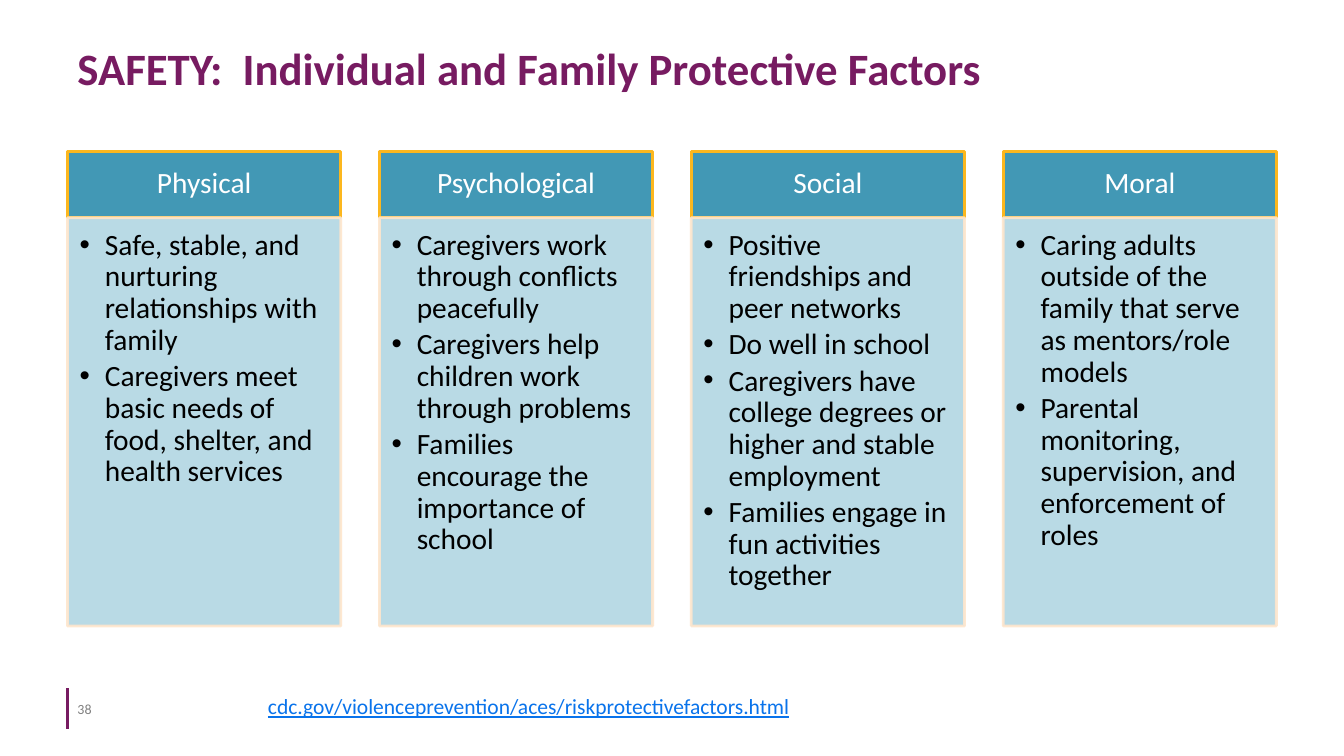
from lxml import etree
from pptx import Presentation
from pptx import util as u
from pptx.dml.color import RGBColor
from pptx.enum import shapes, text
from pptx.oxml import ns

FONT = "Calibri"
COLORS = {
    "plum": "771B61", "grey": "808080", "link": "0973EB", "white": "FFFFFF",
    "black": "000000", "header": "4298B5", "gold": "FCB71E",
    "body": "B2D7E3", "body_edge": "FEE6CD",
}
FACTORS = {
    "Physical": [
        "Safe, stable, and nurturing relationships with family",
        "Caregivers meet basic needs of food, shelter, and health services",
    ],
    "Psychological": [
        "Caregivers work through conflicts peacefully",
        "Caregivers help children work through problems",
        "Families encourage the importance of school",
    ],
    "Social": [
        "Positive friendships and peer networks",
        "Do well in school",
        "Caregivers have college degrees or higher and stable employment",
        "Families engage in fun activities together",
    ],
    "Moral": [
        "Caring adults outside of the family that serve as mentors/role models",
        "Parental monitoring, supervision, and enforcement of roles",
    ],
}


def rgb(name):
    return RGBColor.from_string(COLORS[name])


def add_run(paragraph, words, size, color, bold=False, underline=False):
    run = paragraph.add_run()
    run.text = words
    font = run.font
    font.name, font.size, font.color.rgb = FONT, u.Pt(size), rgb(color)
    font.bold, font.underline = bold, underline


def set_frame(shape, insets, anchor):
    frame = shape.text_frame
    frame.word_wrap = True
    frame.vertical_anchor = anchor
    (frame.margin_left, frame.margin_top,
     frame.margin_right, frame.margin_bottom) = map(u.Inches, insets)
    return frame


def add_label(slide, box, words, size, color, anchor=text.MSO_ANCHOR.MIDDLE, **style):
    label = slide.shapes.add_textbox(*map(u.Inches, box))
    frame = set_frame(label, (0.1, 0.05, 0.1, 0.05), anchor)
    add_run(frame.paragraphs[0], words, size, color, **style)


def add_panel(slide, box, fill, edge, alpha=100):
    panel = slide.shapes.add_shape(shapes.MSO_SHAPE.RECTANGLE, *map(u.Inches, box))
    panel.shadow.inherit = False
    panel.fill.solid()
    panel.fill.fore_color.rgb = rgb(fill)
    panel.line.color.rgb = rgb(edge)
    panel.line.width = u.Pt(2)
    if alpha < 100:
        for color in panel._element.spPr.iter(ns.qn("a:srgbClr")):
            etree.SubElement(color, ns.qn("a:alpha"), val=str(alpha * 1000))
    return panel


def add_bullet(paragraph):
    properties = paragraph._p.get_or_add_pPr()
    properties.set("marL", str(u.Inches(0.25)))
    properties.set("indent", str(-u.Inches(0.25)))
    etree.SubElement(properties, ns.qn("a:buFont"), typeface="Arial")
    etree.SubElement(properties, ns.qn("a:buChar"), char="•")


def add_factor_column(slide, box, heading, points):
    left, top, width, height = box
    header_height = 0.66

    # Heading
    header = add_panel(slide, (left, top, width, header_height), "header", "gold")
    frame = set_frame(header, (0.16, 0.09, 0.16, 0.09), text.MSO_ANCHOR.MIDDLE)
    paragraph = frame.paragraphs[0]
    paragraph.alignment = text.PP_ALIGN.CENTER
    paragraph.line_spacing = 0.9
    add_run(paragraph, heading, 21, "white")

    # Bulleted points
    body_box = (left, top + header_height, width, height - header_height)
    body = add_panel(slide, body_box, "body", "body_edge", alpha=90)
    frame = set_frame(body, (0.12, 0.12, 0.16, 0.18), text.MSO_ANCHOR.TOP)
    for index, point in enumerate(points):
        paragraph = frame.add_paragraph() if index else frame.paragraphs[0]
        paragraph.alignment = text.PP_ALIGN.LEFT
        paragraph.line_spacing = 0.9
        paragraph.space_after = u.Pt(3.15)
        add_bullet(paragraph)
        add_run(paragraph, point, 21, "black")


def add_factors(slide, box):
    left, top, width, height = box
    column_width = 2.71
    pitch = (width - column_width) / (len(FACTORS) - 1)
    for index, (heading, points) in enumerate(FACTORS.items()):
        column_box = (left + index * pitch, top, column_width, height)
        add_factor_column(slide, column_box, heading, points)


def add_footer(slide, box):
    left, top, width, height = box
    bar = slide.shapes.add_connector(
        shapes.MSO_CONNECTOR.STRAIGHT,
        *map(u.Inches, (left, top + height, left, top)))
    bar.line.color.rgb = rgb("plum")
    bar.line.width = u.Pt(2.25)
    etree.SubElement(bar._element.spPr, ns.qn("a:effectLst"))
    add_label(slide, (left, top, 0.61, height), "38", 10, "grey")
    add_label(slide, (left + 1.89, top, width - 1.89, height),
              "cdc.gov/violenceprevention/aces/riskprotectivefactors.html",
              15.4, "link", text.MSO_ANCHOR.TOP, underline=True)


def main():
    presentation = Presentation()
    presentation.slide_width = u.Inches(13.33)
    presentation.slide_height = u.Inches(7.5)
    slide = presentation.slides.add_slide(presentation.slide_layouts[6])

    add_label(slide, (0.67, 0.15, 12, 1.04),
              "SAFETY:  Individual and Family Protective Factors",
              32, "plum", bold=True)
    add_factors(slide, (0.67, 1.5, 11.99, 4.71))
    add_footer(slide, (0.67, 6.83, 7.32, 0.4))
    presentation.save("out.pptx")


if __name__ == "__main__":
    main()
